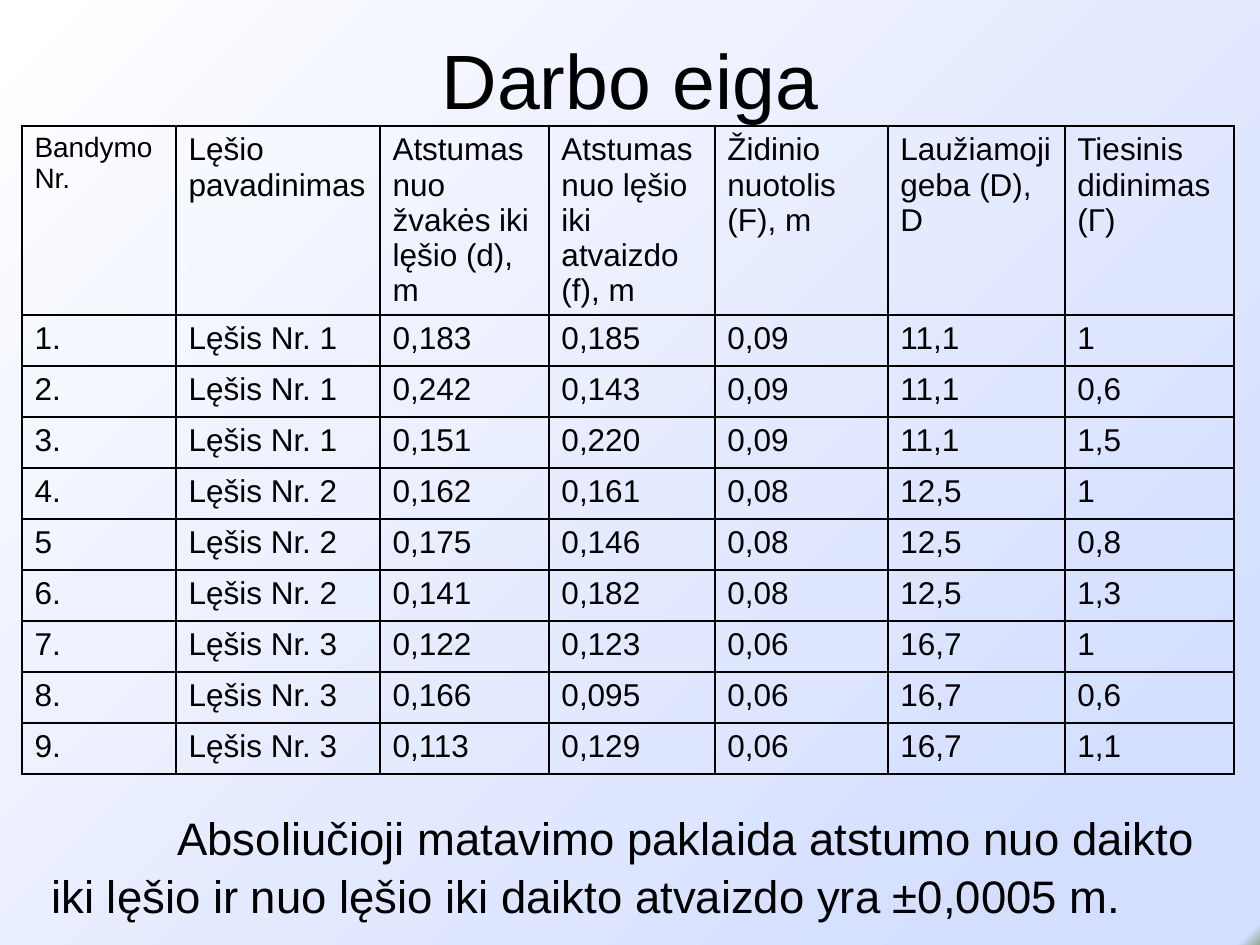
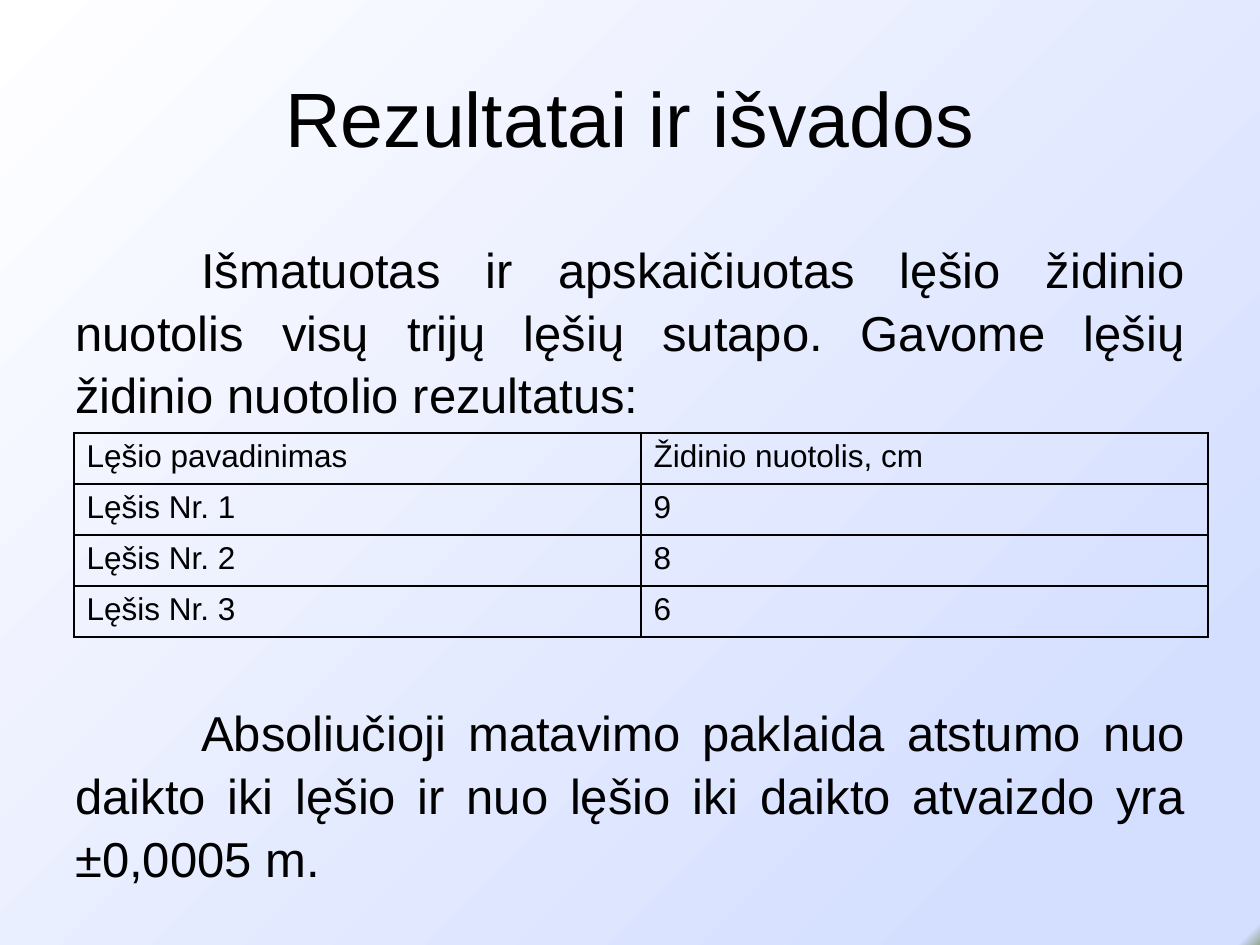
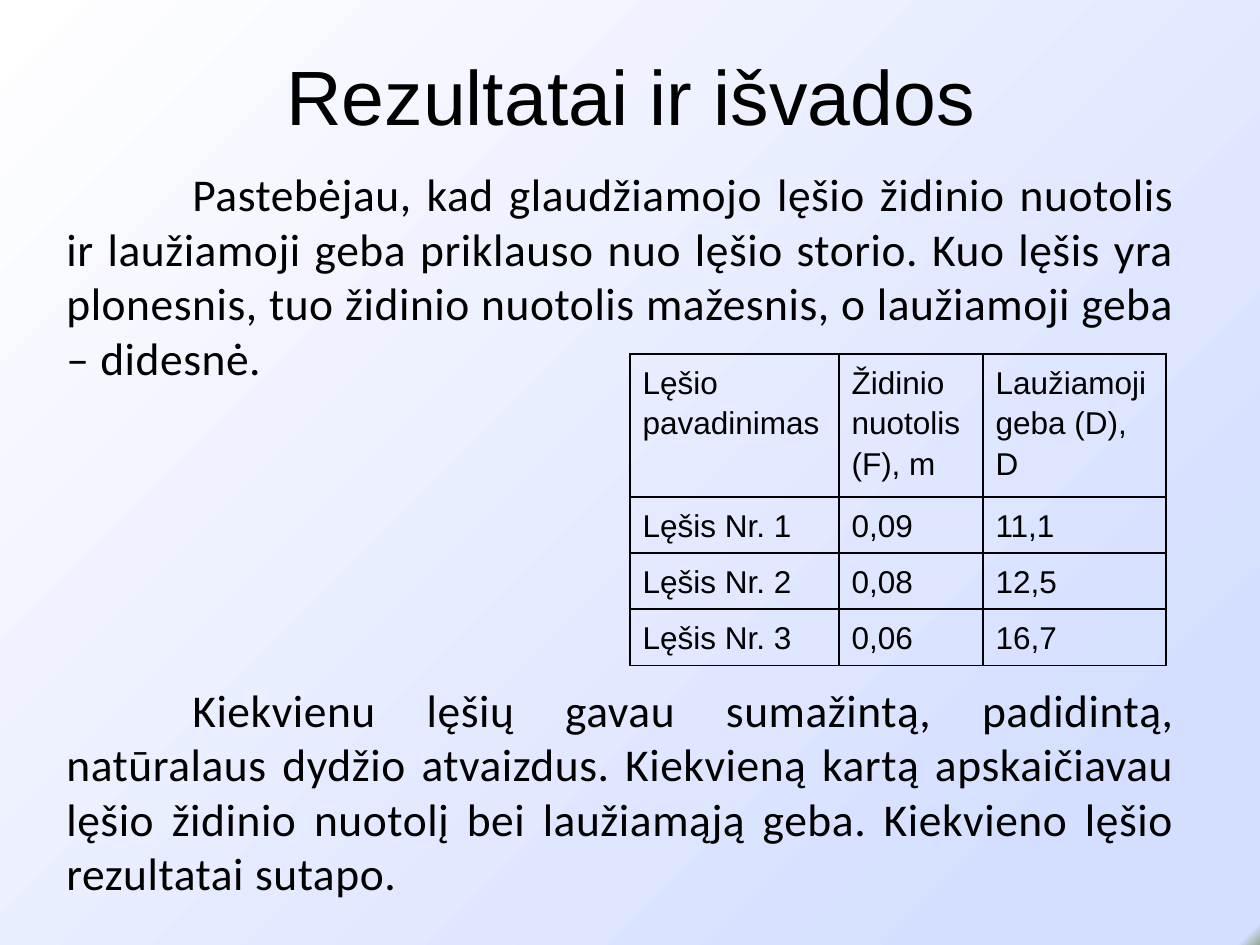
from lxml import etree
from pptx import Presentation
from pptx import util as u
from pptx.dml.color import RGBColor
from pptx.enum import text
from pptx.oxml.ns import qn

SCALE = 914400 / 126  # EMU in one px
INK = "000000"
BACKGROUND = [(0, "FFFFFF"), (87, "D4DEFF"), (99, "D4DEFF"), (100, "96AB94")]
LENS = "Lęšis Nr. {}"


def px(n):
    return u.Emu(round(n * SCALE))


def color(value):
    return RGBColor.from_string(value)


def apply(obj, values):
    for name, value in values.items():
        setattr(obj, name, value)


class Deck:
    """Holds the shared style and the current slide."""

    def __init__(self, font="Arial"):
        self.font = font
        self.prs = Presentation()
        apply(self.prs, {"slide_width": px(1260), "slide_height": px(945)})
        self.paint_background()

    def paint_background(self):
        master = self.prs.slide_master
        fill = master.background.fill
        fill.gradient()
        fill.gradient_angle = 315
        stops = next(master.element.iter(qn("a:gsLst")))
        for stop in list(stops):
            stops.remove(stop)
        for pos, value in BACKGROUND:
            stop = etree.SubElement(stops, qn("a:gs"), pos=str(pos * 1000))
            etree.SubElement(stop, qn("a:srgbClr"), val=value)

    def add_words(self, p, words, size, font=None, **paragraph):
        apply(p, paragraph)
        r = p.add_run()
        r.text = words
        apply(r.font, {"size": u.Pt(size), "name": font or self.font, "bold": False})
        r.font.color.rgb = color(INK)
        return r

    def title(self, words, x, y):
        """Start a slide with its title."""
        self.s = self.prs.slides.add_slide(self.prs.slide_layouts[5])
        sp = self.s.shapes.title
        apply(sp, {"left": px(x), "top": px(y), "width": px(1134), "height": px(158)})
        tf = sp.text_frame
        apply(tf, {"word_wrap": True, "vertical_anchor": text.MSO_ANCHOR.MIDDLE})
        self.add_words(tf.paragraphs[0], words, 44, alignment=text.PP_ALIGN.CENTER)

    def body(self, paragraphs, box, size, gap=0, top=6, spacing=None, font=None,
             align=text.PP_ALIGN.JUSTIFY, tracking=0):
        """Paragraphs with an indented first line, set apart by gap points."""
        tf = self.s.shapes.add_textbox(*map(px, box)).text_frame
        apply(tf, {"word_wrap": True, "margin_top": px(top)})
        for i, words in enumerate(paragraphs):
            p = tf.add_paragraph() if i else tf.paragraphs[0]
            r = self.add_words(p, words, size, font, alignment=align, line_spacing=spacing,
                               space_before=u.Pt(gap if i else 0))
            p._p.get_or_add_pPr().set("indent", str(px(126)))
            if tracking:
                r._r.get_or_add_rPr().set("spc", str(tracking))

    def table(self, rows, x, y, widths, header, height, spacing=None, small=()):
        """Ruled table without fill; columns in small have a 16 pt heading."""
        heights = [header] + [height] * (len(rows) - 1)
        frame = self.s.shapes.add_table(len(rows), len(widths), px(x), px(y),
                                        px(sum(widths)), px(sum(heights)))
        tbl = frame.table
        apply(tbl, {"first_row": False, "horz_banding": False})
        for col, width in zip(tbl.columns, widths):
            col.width = px(width)
        for i, (row, values) in enumerate(zip(tbl.rows, rows)):
            row.height = px(heights[i])
            for j, (cell, value) in enumerate(zip(row.cells, values)):
                size = 16 if i == 0 and j in small else 18
                tf = cell.text_frame
                for k, line in enumerate(value.split("\n")):
                    p = tf.add_paragraph() if k else tf.paragraphs[0]
                    self.add_words(p, line, size, line_spacing=spacing)
                self.rule(cell)
                cell.fill.background()

    def rule(self, cell):
        tcPr = cell._tc.get_or_add_tcPr()
        for side in ("lnL", "lnR", "lnT", "lnB"):
            ln = etree.SubElement(tcPr, qn("a:" + side), w=str(u.Pt(1)))
            fill = etree.SubElement(ln, qn("a:solidFill"))
            etree.SubElement(fill, qn("a:srgbClr"), val=INK)


ERROR_NOTE = ("Absoliučioji matavimo paklaida atstumo nuo daikto iki lęšio ir nuo lęšio "
              "iki daikto atvaizdo yra ±0,0005 m.")
NAME, FOCUS, POWER = "Lęšio pavadinimas", "Židinio nuotolis (F), m", "Laužiamoji geba (D), D"
# Focal length in m and optical power of each lens
LENSES = {1: ("0,09", "11,1"), 2: ("0,08", "12,5"), 3: ("0,06", "16,7")}
# Number, lens, d, f, magnification
TRIALS = [
    ("1.", 1, "0,183", "0,185", "1"),
    ("2.", 1, "0,242", "0,143", "0,6"),
    ("3.", 1, "0,151", "0,220", "1,5"),
    ("4.", 2, "0,162", "0,161", "1"),
    ("5", 2, "0,175", "0,146", "0,8"),
    ("6.", 2, "0,141", "0,182", "1,3"),
    ("7.", 3, "0,122", "0,123", "1"),
    ("8.", 3, "0,166", "0,095", "0,6"),
    ("9.", 3, "0,113", "0,129", "1,1"),
]


def main():
    deck = Deck()

    # Measurements
    deck.title("Darbo eiga", 63, 0)
    heads = ["Bandymo\nNr.", NAME, "Atstumas nuo žvakės iki lęšio (d), m",
             "Atstumas nuo lęšio iki atvaizdo (f), m", FOCUS, POWER, "Tiesinis didinimas (Γ)"]
    trials = [[no, LENS.format(n), d, f, *LENSES[n], zoom] for no, n, d, f, zoom in TRIALS]
    deck.table([heads] + trials, 22, 126, [154, 204, 169, 166, 173, 177, 169], 189, 51,
               small=(0,))
    deck.body([ERROR_NOTE], (39, 800, 1191, 123), 26, spacing=1.07,
              align=text.PP_ALIGN.LEFT)

    # Focal lengths
    deck.title("Rezultatai ir išvados", 63, 38)
    deck.body(["Išmatuotas ir apskaičiuotas lęšio židinio nuotolis visų trijų lęšių sutapo. "
               "Gavome lęšių židinio nuotolio rezultatus:", ERROR_NOTE],
              (63, 220, 1134, 679), 28, gap=157, top=15, spacing=1.07)
    lengths = [[LENS.format(n), focus[-1]] for n, (focus, _) in LENSES.items()]
    deck.table([[NAME, "Židinio nuotolis, cm"]] + lengths, 74, 433, [567, 567], 51, 51)

    # Conclusions
    deck.title("Rezultatai ir išvados", 64, 16)
    deck.body(["Pastebėjau, kad glaudžiamojo lęšio židinio nuotolis ir laužiamoji geba "
               "priklauso nuo lęšio storio. Kuo lęšis yra plonesnis, tuo židinio nuotolis "
               "mažesnis, o laužiamoji geba – didesnė.",
               "Kiekvienu lęšių gavau sumažintą, padidintą, natūralaus dydžio atvaizdus. "
               "Kiekvieną kartą apskaičiavau lęšio židinio nuotolį bei laužiamąją geba. "
               "Kiekvieno lęšio rezultatai sutapo."],
              (54, 155, 1134, 774), 26, gap=170, top=11, font="Calibri", tracking=30)
    powers = [[LENS.format(n), *values] for n, values in LENSES.items()]
    deck.table([[NAME, FOCUS, POWER]] + powers, 630, 354, [209, 144, 183], 134, 53,
               spacing=1.15)

    deck.prs.save("out.pptx")


if __name__ == "__main__":
    main()
